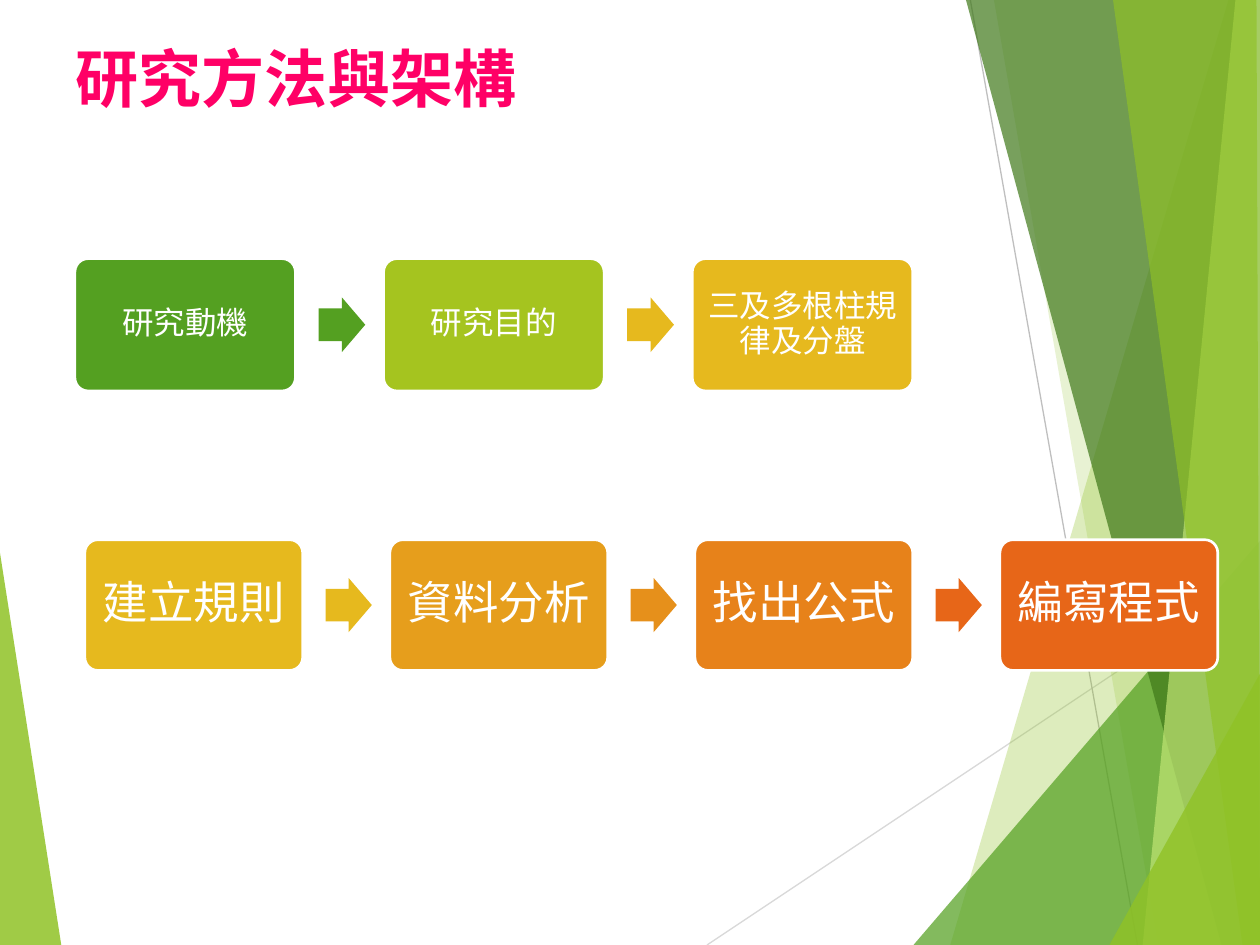
"""Build the research method slide: a title over two rows of process steps."""
from dataclasses import dataclass

import pptx
import pptx.dml.color
import pptx.enum.shapes
import pptx.enum.text
import pptx.oxml
import pptx.util
from lxml import etree

Pt = pptx.util.Pt
Kind = pptx.enum.shapes.MSO_SHAPE
Align = pptx.enum.text.PP_ALIGN
Anchor = pptx.enum.text.MSO_ANCHOR


@dataclass(frozen=True)
class Theme:
    font: str = "Karla"
    white: str = "FFFFFF"
    pink: str = "FF0066"
    lime: str = "90C226"
    pale: str = "C0E474"
    green: str = "54A021"
    dark: str = "3F7819"
    head: float = 36
    small: float = 18
    large: float = 26


@dataclass(frozen=True)
class Facet:
    color: str
    alpha: int
    points: tuple


@dataclass(frozen=True)
class Ray:
    color: str
    start: tuple
    end: tuple


@dataclass(frozen=True)
class Step:
    label: str
    color: str
    arrow: str = ""


@dataclass(frozen=True)
class Row:
    left: float
    top: float
    width: float
    size: float
    inset: float
    steps: tuple


THEME = Theme()

RAYS = (
    Ray("D9D9D9", (404, 540), (720.5, 329)),
    Ray("BFBFBF", (554.5, 0), (650, 540)),
)

EDGE = Facet(THEME.lime, 85, ((-0.5, 316), (35.3, 540.5), (-0.5, 540)))

FACETS = (
    Facet(THEME.lime, 30, ((702, 0), (543, 540), (721, 540.5), (720.5, 0.5))),
    Facet(THEME.lime, 20, ((567.5, -0.5), (661.5, 540), (720.5, 540), (720.5, -0.5))),
    Facet(THEME.green, 72, ((522.5, 540), (720, 309), (720.5, 540))),
    Facet(THEME.dark, 70, ((552, -0.5), (698.5, 540), (720.5, 539.5), (720.5, -0.5))),
    Facet(THEME.pale, 70, ((706.5, -0.5), (653, 540), (720.5, 540), (720, -0.5))),
    Facet(THEME.lime, 65, ((636, -0.5), (710, 540), (720, 540), (718.5, -0.5))),
    Facet(THEME.lime, 80, ((634.5, 540), (720.5, 385), (720.5, 539.5))),
)

ROWS = (
    Row(42.8, 147.8, 126, THEME.small, 5, (
        Step("研究動機", "54A021", "54A021"),
        Step("研究目的", "A5C41F", "E6B91E"),
        Step("三及多根柱規律及分盤", "E6B91E"),
    )),
    Row(48.5, 308.4, 124.5, THEME.large, 7, (
        Step("建立規則", "E6B91E", "E6B91E"),
        Step("資料分析", "E69E1C", "E6901B"),
        Step("找出公式", "E7821A", "E76618"),
        Step("編寫程式", "E76618"),
    )),
)


def rgb(code: str):
    """Turn a hex code into a colour."""
    return pptx.dml.color.RGBColor.from_string(code)


def apply(item, values: dict) -> None:
    """Set each value on the item."""
    for name, value in values.items():
        setattr(item, name, value)


def paint(shape, color: str) -> None:
    """Fill a shape flat, with no line or shadow."""
    shape.shadow.inherit = False
    shape.fill.solid()
    shape.fill.fore_color.rgb = rgb(color)
    shape.line.fill.background()


def write(frame, text: str, size: float, color: str, look: dict, para: dict, bold: bool) -> None:
    """Put one styled paragraph in a text frame."""
    frame.text = text
    apply(frame, look)
    line = frame.paragraphs[0]
    apply(line, para)
    font = line.runs[0].font
    apply(font, {"name": THEME.font, "size": Pt(size), "bold": bold})
    font.color.rgb = rgb(color)


def draw_ray(shapes, ray: Ray) -> None:
    """Draw a thin backdrop line."""
    ends = (Pt(v) for v in ray.start + ray.end)
    line = shapes.add_connector(pptx.enum.shapes.MSO_CONNECTOR.STRAIGHT, *ends)
    line.line.width = Pt(0.75)
    line.line.color.rgb = rgb(ray.color)
    etree.SubElement(line._element.spPr, pptx.oxml.ns.qn("a:effectLst"))


def draw_facet(shapes, facet: Facet) -> None:
    """Draw a see-through backdrop polygon."""
    first, *rest = facet.points
    pen = shapes.build_freeform(*first, scale=Pt(1))
    pen.add_line_segments(rest, close=True)
    shape = pen.convert_to_shape()
    paint(shape, facet.color)
    tint = next(shape._element.spPr.iter(pptx.oxml.ns.qn("a:srgbClr")))
    etree.SubElement(tint, pptx.oxml.ns.qn("a:alpha"), val=str(facet.alpha * 1000))


def draw_block(shapes, kind, box: tuple, color: str, adjust: tuple):
    """Draw a filled preset shape."""
    shape = shapes.add_shape(kind, *(Pt(v) for v in box))
    paint(shape, color)
    for index, value in enumerate(adjust):
        shape.adjustments[index] = value
    return shape


def draw_row(shapes, row: Row) -> None:
    """Draw one row of boxes with arrows between them."""
    wide, high = row.width, row.width * 0.6
    span, tall = wide * 0.212, wide * 0.248
    sides = ("left", "top", "right", "bottom")
    look = {f"margin_{side}": Pt(row.inset) for side in sides}
    look |= {"word_wrap": True, "vertical_anchor": Anchor.MIDDLE}
    para = {"alignment": Align.CENTER, "line_spacing": 0.9}
    for index, step in enumerate(row.steps):
        left = row.left + index * wide * 1.4
        box = draw_block(shapes, Kind.ROUNDED_RECTANGLE, (left, row.top, wide, high),
                         step.color, (0.1,))
        box.line.color.rgb = rgb(THEME.white)
        box.line.width = Pt(1.5)
        write(box.text_frame, step.label, row.size, THEME.white, look, para, False)
        if step.arrow:
            place = (left + wide * 1.105, row.top + (high - tall) / 2, span, tall)
            draw_block(shapes, Kind.RIGHT_ARROW, place, step.arrow, (0.6, 0.5))


def main() -> None:
    """Build and save the slide."""
    deck = pptx.Presentation()
    apply(deck, {"slide_width": Pt(720), "slide_height": Pt(540)})
    slide = deck.slides.add_slide(deck.slide_layouts[5])
    shapes = slide.shapes
    draw_facet(shapes, EDGE)
    for ray in RAYS:
        draw_ray(shapes, ray)
    for facet in FACETS:
        draw_facet(shapes, facet)
    title = shapes.title
    apply(title, {"left": Pt(36), "top": Pt(18.7), "width": Pt(648), "height": Pt(90)})
    look = {"word_wrap": True, "vertical_anchor": Anchor.TOP}
    write(title.text_frame, "研究方法與架構", THEME.head, THEME.pink, look,
          {"alignment": Align.LEFT}, True)
    title._element.getparent().append(title._element)
    for row in ROWS:
        draw_row(shapes, row)
    deck.save("out.pptx")


if __name__ == "__main__":
    main()
